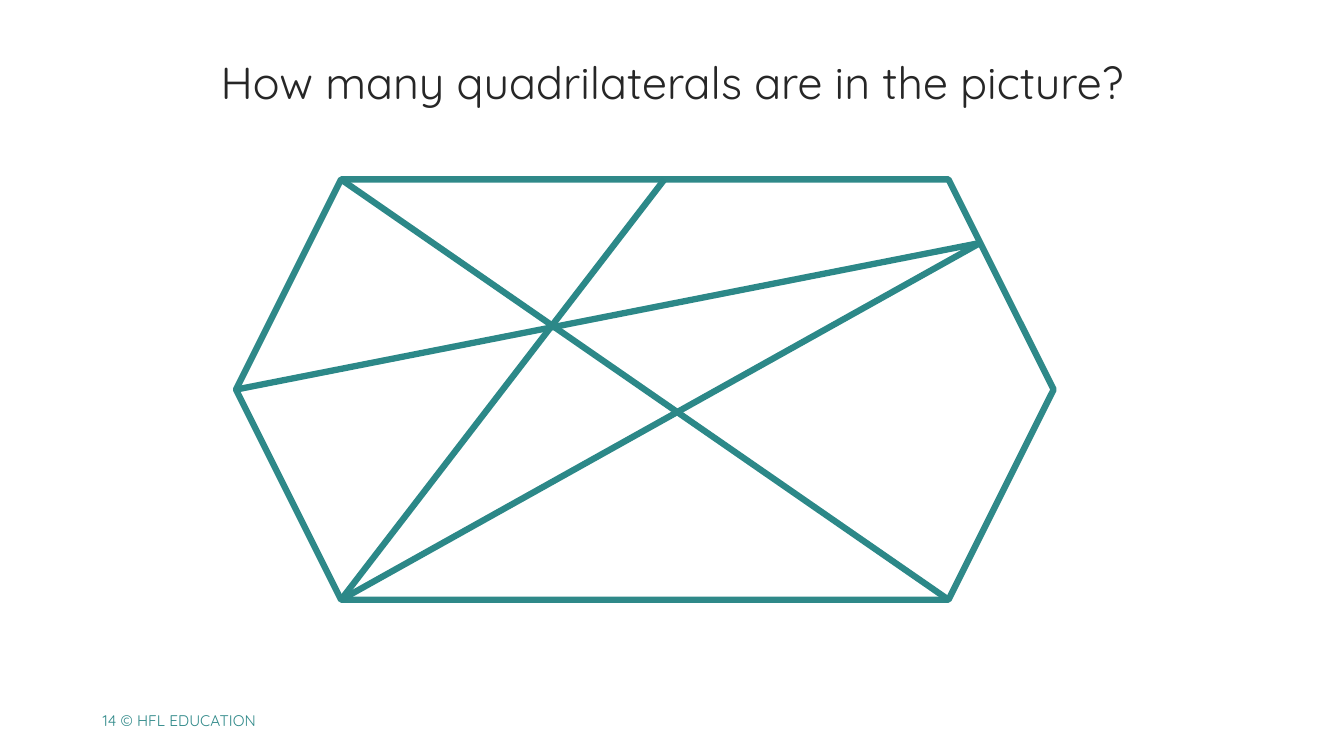
from lxml import etree
from pptx import Presentation
from pptx.dml.color import RGBColor
from pptx.enum.shapes import MSO_CONNECTOR, MSO_SHAPE
from pptx.enum.text import MSO_ANCHOR, PP_ALIGN
from pptx.oxml.ns import qn
from pptx.util import Inches, Pt

HEXAGON_TEAL = RGBColor(0x2F, 0x89, 0x89)
LINE_TEAL = RGBColor(0x2C, 0x88, 0x88)
TITLE_GREY = RGBColor(0x26, 0x26, 0x26)
FONT = "Quicksand"
LINE_WIDTH = Pt(4.5)


def add_text(slide, box, text, size, color, align=PP_ALIGN.LEFT, anchor=MSO_ANCHOR.TOP):
    text_box = slide.shapes.add_textbox(*map(Inches, box))
    frame = text_box.text_frame
    frame.word_wrap = True
    frame.vertical_anchor = anchor
    paragraph = frame.paragraphs[0]
    paragraph.text = text
    paragraph.alignment = align
    paragraph.font.name = FONT
    paragraph.font.size = Pt(size)
    paragraph.font.color.rgb = color


def add_line(slide, start, end):
    line = slide.shapes.add_connector(
        MSO_CONNECTOR.STRAIGHT, *map(Inches, (*start, *end)))
    line.line.color.rgb = LINE_TEAL
    line.line.width = LINE_WIDTH
    etree.SubElement(line._element.spPr, qn("a:effectLst"))


def add_puzzle(slide, box):
    """Draw a hexagon in the box, cut by four lines between points on its edge."""
    left, top, width, height = box
    hexagon = slide.shapes.add_shape(MSO_SHAPE.HEXAGON, *map(Inches, box))
    hexagon.shadow.inherit = False
    hexagon.fill.background()
    hexagon.line.color.rgb = HEXAGON_TEAL
    hexagon.line.width = LINE_WIDTH

    inset = height / 4
    right, bottom = left + width, top + height
    top_left = (left + inset, top)
    bottom_left = (left + inset, bottom)
    bottom_right = (right - inset, bottom)
    left_corner = (left, top + height / 2)
    top_edge = (left + 4.25, top)
    drop = 0.63
    right_edge = (right - inset + drop / 2, top + drop)

    for start, end in (
        (top_left, bottom_right),
        (bottom_left, top_edge),
        (left_corner, right_edge),
        (bottom_left, right_edge),
    ):
        add_line(slide, start, end)


def main():
    presentation = Presentation()
    presentation.slide_width = Inches(13.33)
    presentation.slide_height = Inches(7.5)
    slide = presentation.slides.add_slide(presentation.slide_layouts[6])
    add_text(slide, (0.92, 6.95, 2.75, 0.4), "14 © HFL EDUCATION", 11,
             HEXAGON_TEAL, anchor=MSO_ANCHOR.MIDDLE)
    add_text(slide, (1.75, 0.49, 9.84, 0.64),
             "How many quadrilaterals are in the picture?", 32,
             TITLE_GREY, align=PP_ALIGN.CENTER)
    add_puzzle(slide, (2.34, 1.78, 8.11, 4.17))
    presentation.save("out.pptx")


if __name__ == "__main__":
    main()
